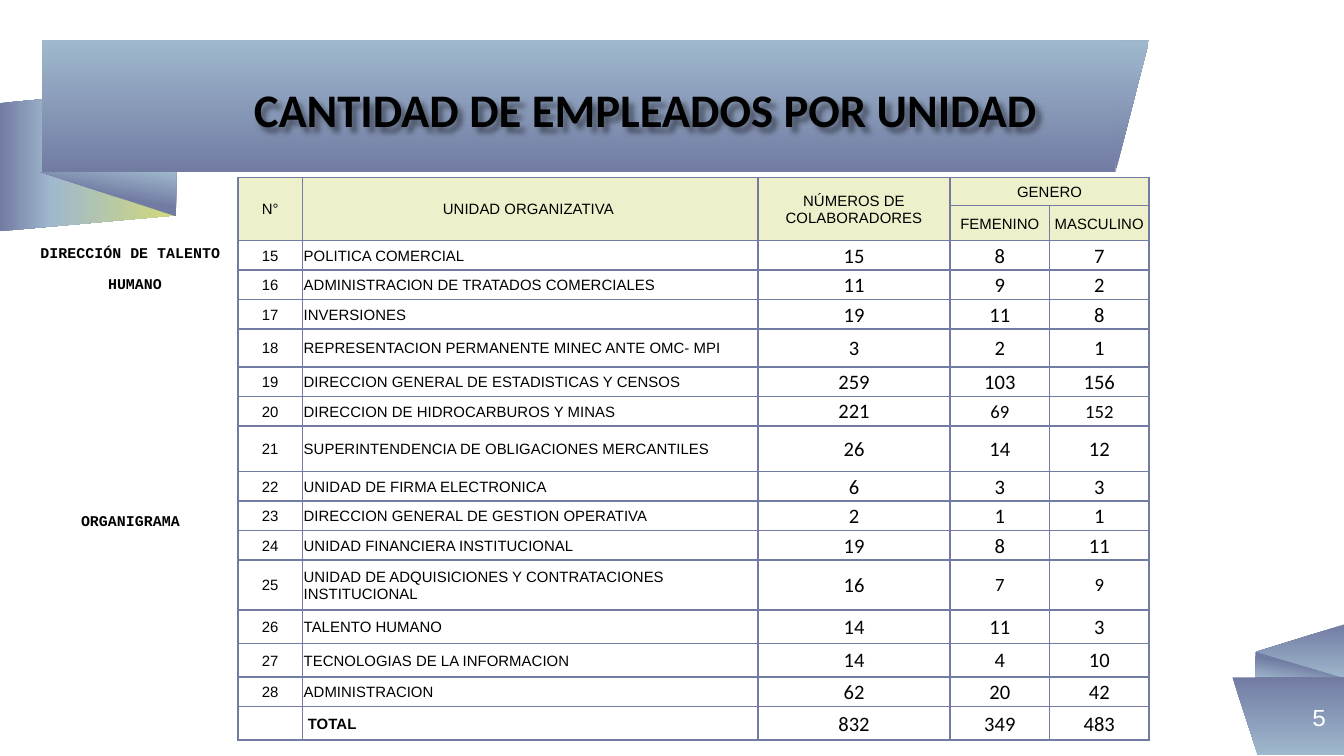
from lxml import etree
from pptx import Presentation
from pptx.dml.color import RGBColor
from pptx.enum.shapes import MSO_SHAPE
from pptx.enum.text import MSO_ANCHOR, MSO_AUTO_SIZE, PP_ALIGN
from pptx.oxml.ns import qn
from pptx.util import Inches, Pt

RECTANGLE = MSO_SHAPE.RECTANGLE
TRIANGLE = MSO_SHAPE.ISOSCELES_TRIANGLE
RIGHT_TRIANGLE = MSO_SHAPE.RIGHT_TRIANGLE
PARALLELOGRAM = MSO_SHAPE.PARALLELOGRAM
MIDDLE, TOP = MSO_ANCHOR.MIDDLE, MSO_ANCHOR.TOP
NO_AUTOFIT = MSO_AUTO_SIZE.NONE
LEFT, CENTER, RIGHT = PP_ALIGN.LEFT, PP_ALIGN.CENTER, PP_ALIGN.RIGHT

SLIDE_WIDTH = Inches(10)
SLIDE_HEIGHT = SLIDE_WIDTH * 9 // 16

INDIGO, SKY, LIME, CREAM = "727CA3", "9FB8CD", "D2DA7A", "EDF0CA"
BLACK, WHITE = "000000", "FFFFFF"
FADE = [(0, INDIGO), (100, SKY)]
FOLD = [(0, INDIGO), (47, INDIGO), (100, SKY)]
TAIL = [(0, INDIGO), (29, SKY), (100, LIME)]

RIBBONS = [
    (PARALLELOGRAM, (0.12, 0.53, 1.07, 1.31), 270, True, 0.11, TAIL, 90),
    (RIGHT_TRIANGLE, (0.3, 1.28, 1.01, 0.33), 180, False, None, FOLD, 100),
    (RECTANGLE, (0.31, 0.3, 7.99, 0.98), 180, True, None, FADE, 90),
    (TRIANGLE, (8.3, 0.3, 0.25, 0.98), 180, False, 1, FADE, 90),
    (TRIANGLE, (9.47, 4.52, 0.41, 0.66), 270, False, 0.5, FADE, 180),
    (RIGHT_TRIANGLE, (9.34, 4.85, 0.66, 0.2), 0, False, None, FOLD, 100),
    (RECTANGLE, (9.35, 5.04, 0.65, 0.58), 180, False, None, FADE, 270),
    (TRIANGLE, (9.17, 5.04, 0.19, 0.58), 180, True, 1, FADE, 270),
]

COLUMN_WIDTHS = [0.48, 3.39, 1.43, 0.74, 0.74]
HEADER_HEIGHTS = [0.21, 0.25]
HEADERS = [
    ["N°", "UNIDAD ORGANIZATIVA ", "NÚMEROS DE COLABORADORES", "GENERO", ""],
    ["", "", "", "FEMENINO", "MASCULINO"],
]
HEADER_MERGES = [(0, 0, 1, 0), (0, 1, 1, 1), (0, 2, 1, 2), (0, 3, 0, 4)]
FIRST_NUMBER = 15
UNITS = [
    ("POLITICA COMERCIAL", 15, 8, 7, 0.22),
    ("ADMINISTRACION DE TRATADOS COMERCIALES", 11, 9, 2, 0.22),
    ("INVERSIONES", 19, 11, 8, 0.22),
    ("REPRESENTACION PERMANENTE MINEC ANTE OMC- MPI", 3, 2, 1, 0.28),
    ("DIRECCION GENERAL DE ESTADISTICAS Y CENSOS", 259, 103, 156, 0.22),
    ("DIRECCION DE HIDROCARBUROS Y MINAS", 221, 69, 152, 0.22),
    ("SUPERINTENDENCIA DE OBLIGACIONES MERCANTILES", 26, 14, 12, 0.34),
    ("UNIDAD DE FIRMA ELECTRONICA", 6, 3, 3, 0.22),
    ("DIRECCION GENERAL DE GESTION OPERATIVA", 2, 1, 1, 0.22),
    ("UNIDAD FINANCIERA INSTITUCIONAL", 19, 8, 11, 0.22),
    ("UNIDAD DE ADQUISICIONES Y CONTRATACIONES INSTITUCIONAL", 16, 7, 9, 0.37),
    ("TALENTO HUMANO", 14, 11, 3, 0.25),
    ("TECNOLOGIAS DE LA INFORMACION", 14, 4, 10, 0.25),
    ("ADMINISTRACION", 62, 20, 42, 0.22),
]
TOTAL_ROW = ["", " TOTAL", "832", "349", "483"]
TOTAL_HEIGHT = 0.25
SMALL_GENDER_NUMBERS = ("20", "25")


def rgb(value):
    return RGBColor.from_string(value)


def set_attributes(target, values):
    for name, value in values.items():
        setattr(target, name, value)


def box(left, top, width, height):
    return dict(left=Inches(left), top=Inches(top),
                width=Inches(width), height=Inches(height))


def add_child(parent, tag, **attributes):
    child = etree.SubElement(parent, qn(tag))
    for name, value in attributes.items():
        child.set(name, str(value))
    return child


def add_ribbon(slide, kind, place, rotation, flipped, adjustment, stops, angle):
    shape = slide.shapes.add_shape(kind, **box(*place))
    shape.rotation = rotation
    shape.line.fill.background()
    if adjustment is not None:
        shape.adjustments[0] = adjustment
    properties = shape.element.spPr
    if flipped:
        properties.find(qn("a:xfrm")).set("flipH", "1")
    gradient = add_child(properties, "a:gradFill", rotWithShape=1)
    stop_list = add_child(gradient, "a:gsLst")
    for position, color in stops:
        stop = add_child(stop_list, "a:gs", pos=position * 1000)
        add_child(stop, "a:srgbClr", val=color)
    add_child(gradient, "a:lin", ang=angle * 60000, scaled=0)
    properties.find(qn("a:prstGeom")).addnext(gradient)
    shape.shadow.inherit = False


def write_paragraph(paragraph, text, font, size, color=BLACK, bold=False, **layout):
    run = paragraph.add_run()
    run.text = text
    set_attributes(run.font, dict(name=font, size=Pt(size), bold=bold))
    run.font.color.rgb = rgb(color)
    set_attributes(paragraph, layout)


def prepare_frame(shape, place, anchor):
    set_attributes(shape, box(*place))
    frame = shape.text_frame
    set_attributes(frame, dict(
        word_wrap=True, auto_size=NO_AUTOFIT, vertical_anchor=anchor,
        margin_left=0, margin_right=0, margin_top=0, margin_bottom=0))
    return frame


def bring_to_front(shape):
    shape.element.getparent().append(shape.element)


def add_title(slide):
    title = slide.shapes.title
    frame = prepare_frame(title, (1.06, 0.35, 7.48, 0.98), MIDDLE)
    write_paragraph(frame.paragraphs[0], "CANTIDAD DE EMPLEADOS POR UNIDAD",
                    "Calibri", 25, bold=True, alignment=CENTER, line_spacing=0.9)
    title.fill.background()
    effects = add_child(title.element.spPr, "a:effectLst")
    shadow = add_child(effects, "a:outerShdw", blurRad=Pt(3), dist=Pt(3), dir=2700000)
    color = add_child(shadow, "a:srgbClr", val=BLACK)
    add_child(color, "a:alpha", val=43000)
    bring_to_front(title)


def add_page_number(slide):
    place = (9.34, 5.04, 0.53, 0.58)
    frame = prepare_frame(slide.shapes.add_textbox(**box(*place)), place, MIDDLE)
    write_paragraph(frame.paragraphs[0], "5", "Courier New", 13, WHITE, alignment=RIGHT)


def add_side_labels(slide):
    body = slide.placeholders[1]
    frame = prepare_frame(body, (0, 1.79, 1.93, 1.1), TOP)
    labels = [("DIRECCIÓN DE TALENTO ", 6), ("HUMANO", 6), ("ORGANIGRAMA ", 116)]
    for index, (text, gap) in enumerate(labels):
        paragraph = frame.add_paragraph() if index else frame.paragraphs[0]
        write_paragraph(paragraph, text, "Courier New", 8, bold=True, alignment=CENTER,
                        line_spacing=1.15, space_before=Pt(gap))
        properties = paragraph._p.get_or_add_pPr()
        properties.set("marL", str(Inches(0.08)))
        properties.set("indent", "0")
        add_child(properties, "a:buNone")
    bring_to_front(body)


def fill_cell(cell, text, font, size, bold, alignment, fill):
    set_attributes(cell, dict(
        vertical_anchor=MIDDLE, margin_left=Inches(0.01), margin_right=Inches(0.01),
        margin_top=Inches(0.01), margin_bottom=0))
    paragraph = cell.text_frame.paragraphs[0]
    if text:
        write_paragraph(paragraph, text, font, size, bold=bold, alignment=alignment)
    add_child(paragraph._p, "a:endParaRPr", sz=size * 100)
    properties = cell._tc.get_or_add_tcPr()
    for side in ("a:lnL", "a:lnR", "a:lnT", "a:lnB"):
        line = add_child(properties, side, w=Pt(1))
        add_child(add_child(line, "a:solidFill"), "a:srgbClr", val=INDIGO)
    if fill:
        cell.fill.solid()
        cell.fill.fore_color.rgb = rgb(fill)
    else:
        cell.fill.background()


def add_employee_table(slide):
    unit_rows = [[str(number), name, str(staff), str(women), str(men)]
                 for number, (name, staff, women, men, _) in enumerate(UNITS, FIRST_NUMBER)]
    rows = HEADERS + unit_rows + [TOTAL_ROW]
    heights = HEADER_HEIGHTS + [unit[-1] for unit in UNITS] + [TOTAL_HEIGHT]
    place = box(1.77, 1.32, sum(COLUMN_WIDTHS), sum(heights))
    table = slide.shapes.add_table(len(rows), len(COLUMN_WIDTHS), **place).table
    set_attributes(table, dict(first_row=False, horz_banding=False))
    for column, width in zip(table.columns, COLUMN_WIDTHS):
        column.width = Inches(width)
    for row_index, (texts, height) in enumerate(zip(rows, heights)):
        table.rows[row_index].height = Inches(height)
        header = row_index < len(HEADERS)
        for column_index, text in enumerate(texts):
            font, size = "Arial", 8
            if not header and column_index >= 2:
                small = texts[0] in SMALL_GENDER_NUMBERS and column_index > 2
                font, size = "Calibri", 10 if small else 11
            fill_cell(table.cell(row_index, column_index), text, font, size,
                      bold=texts is TOTAL_ROW and column_index == 1,
                      alignment=LEFT if column_index == 1 and not header else CENTER,
                      fill=CREAM if header else None)
    for top, left, bottom, right in HEADER_MERGES:
        table.cell(top, left).merge(table.cell(bottom, right))


def main():
    presentation = Presentation()
    set_attributes(presentation, dict(slide_width=SLIDE_WIDTH, slide_height=SLIDE_HEIGHT))
    slide = presentation.slides.add_slide(presentation.slide_layouts[1])
    for ribbon in RIBBONS:
        add_ribbon(slide, *ribbon)
    add_page_number(slide)
    add_title(slide)
    add_employee_table(slide)
    add_side_labels(slide)
    presentation.save("out.pptx")


if __name__ == "__main__":
    main()
